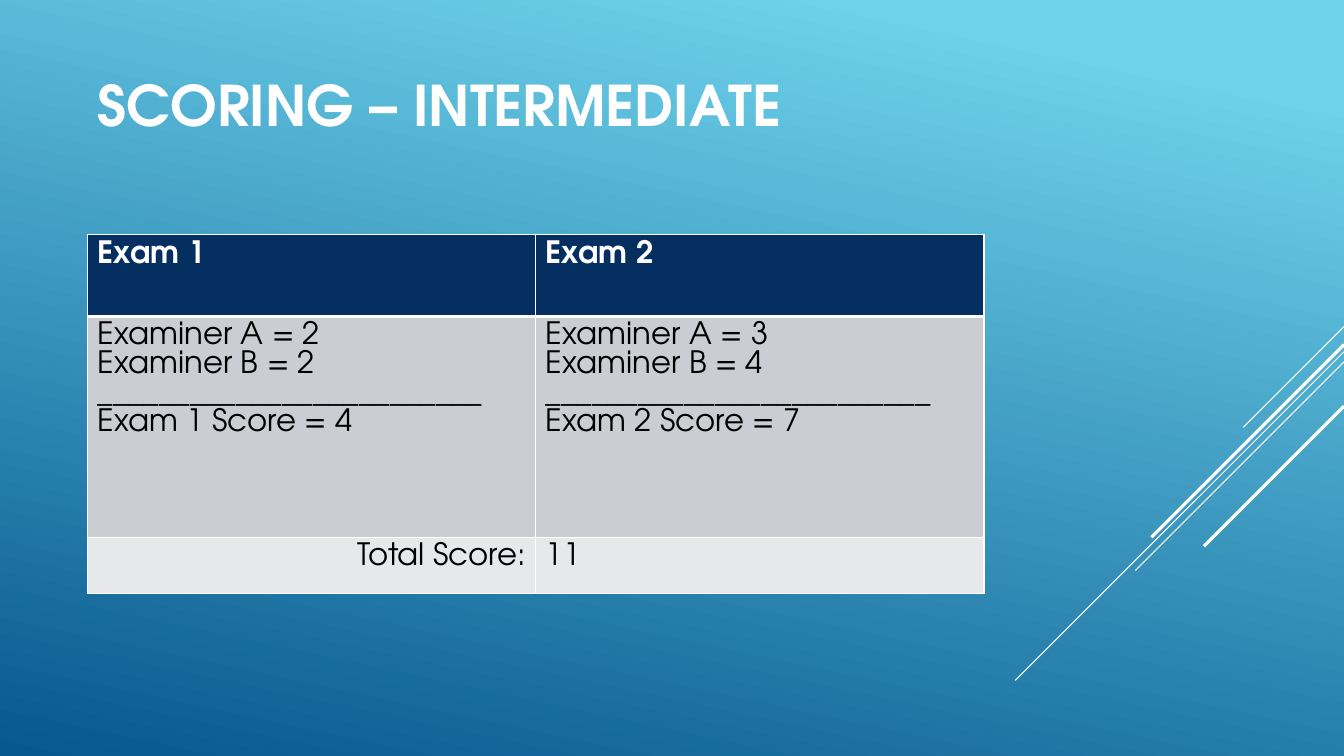
from lxml.etree import SubElement
from pptx import Presentation
from pptx.dml.color import RGBColor
from pptx.enum.shapes import MSO_CONNECTOR as Connector
from pptx.enum.text import MSO_ANCHOR as Anchor, PP_ALIGN as Align
from pptx.oxml.ns import qn
from pptx.util import Inches, Pt


def color(hex_text):
    return RGBColor.from_string(hex_text)


class ScoringSlide:
    FONT = "TeX Gyre Adventor"
    WHITE, BLACK = "FFFFFF", "000000"

    def __init__(self, presentation):
        self.slide = presentation.slides.add_slide(presentation.slide_layouts[6])

    def background(self, start, end, angle):
        fill = self.slide.background.fill
        fill.gradient()
        fill.gradient_angle = 360 - angle
        for stop, (position, hex_text) in zip(fill.gradient_stops, (start, end)):
            stop.position = position
            stop.color.rgb = color(hex_text)

    def diagonal(self, top, length, width):
        """Draw a 45 degree line down and left from the right edge."""
        right = 13.33
        line = self.slide.shapes.add_connector(
            Connector.STRAIGHT, Inches(right), Inches(top),
            Inches(right - length), Inches(top + length))
        line.line.color.rgb = color(self.WHITE)
        line.line.width = Pt(width)
        SubElement(line._element.spPr, qn("a:effectLst"))

    def text_run(self, paragraph, text, size, hex_text, bold=False):
        run = paragraph.add_run()
        run.text = text
        font = run.font
        font.name, font.size, font.bold = self.FONT, Pt(size), bold
        font.color.rgb = color(hex_text)

    def title(self, text, left, top, width, height):
        box = self.slide.shapes.add_textbox(
            Inches(left), Inches(top), Inches(width), Inches(height))
        frame = box.text_frame
        frame.word_wrap = True
        frame.vertical_anchor = Anchor.MIDDLE
        self.text_run(frame.paragraphs[0], text, 40, self.WHITE, bold=True)

    def borders(self, cell, top, bottom):
        properties = cell._tc.get_or_add_tcPr()
        for side, width in (("L", 1), ("R", 1), ("T", top), ("B", bottom)):
            line = SubElement(properties, qn(f"a:ln{side}"), w=str(Pt(width)))
            fill = SubElement(line, qn("a:solidFill"))
            SubElement(fill, qn("a:srgbClr"), val=self.WHITE)

    def cell(self, cell, lines, fill, row, align):
        self.borders(cell, top=3 if row == 1 else 1, bottom=3 if row == 0 else 1)
        cell.fill.solid()
        cell.fill.fore_color.rgb = color(fill)
        frame = cell.text_frame
        for index, text in enumerate(lines):
            paragraph = frame.add_paragraph() if index else frame.paragraphs[0]
            paragraph.alignment = align
            paragraph.line_spacing = Pt(20.7)
            self.text_run(paragraph, text, 22,
                          self.BLACK if row else self.WHITE, bold=row == 0)

    def table(self, rows, fills, heights, left, top, width):
        columns = len(rows[0])
        table = self.slide.shapes.add_table(
            len(rows), columns, Inches(left), Inches(top),
            Inches(width), Inches(sum(heights))).table
        table.first_row = table.horz_banding = False
        for row, (values, fill, height) in enumerate(zip(rows, fills, heights)):
            table.rows[row].height = Inches(height)
            for column, lines in enumerate(values):
                total_label = row == len(rows) - 1 and column == 0
                self.cell(table.cell(row, column), lines, fill, row,
                          Align.RIGHT if total_label else Align.LEFT)


def exam_lines(exam, score_a, score_b):
    return [f"Examiner A = {score_a}", f"Examiner B = {score_b}",
            "_" * 25, f"Exam {exam} Score = {score_a + score_b}"]


def main():
    presentation = Presentation()
    presentation.slide_width = Inches(13.33)
    presentation.slide_height = Inches(7.5)
    scoring = ScoringSlide(presentation)

    # Background and diagonal lines
    scoring.background((0.1, "6ED2EB"), (1, "06588E"), angle=102)
    for top, length, width in ((3.24, 1, 0.75), (3.49, 3.26, 0.75),
                               (3.59, 2.07, 0.75), (3.42, 1.91, 2.25),
                               (4.03, 1.39, 2.25)):
        scoring.diagonal(top, length, width)

    # Title
    scoring.title("SCORING – INTERMEDIATE", 0.87, 0.21, 9.33, 1.65)

    # Score table
    rows = [
        [["Exam 1"], ["Exam 2"]],
        [exam_lines(1, 2, 2), exam_lines(2, 3, 4)],
        [["Total Score:"], ["11"]],
    ]
    scoring.table(rows, ("052F61", "CCCDD2", "E7E8EA"), (0.81, 2.19, 0.56),
                  0.87, 2.33, 8.89)

    presentation.save("out.pptx")


if __name__ == "__main__":
    main()
